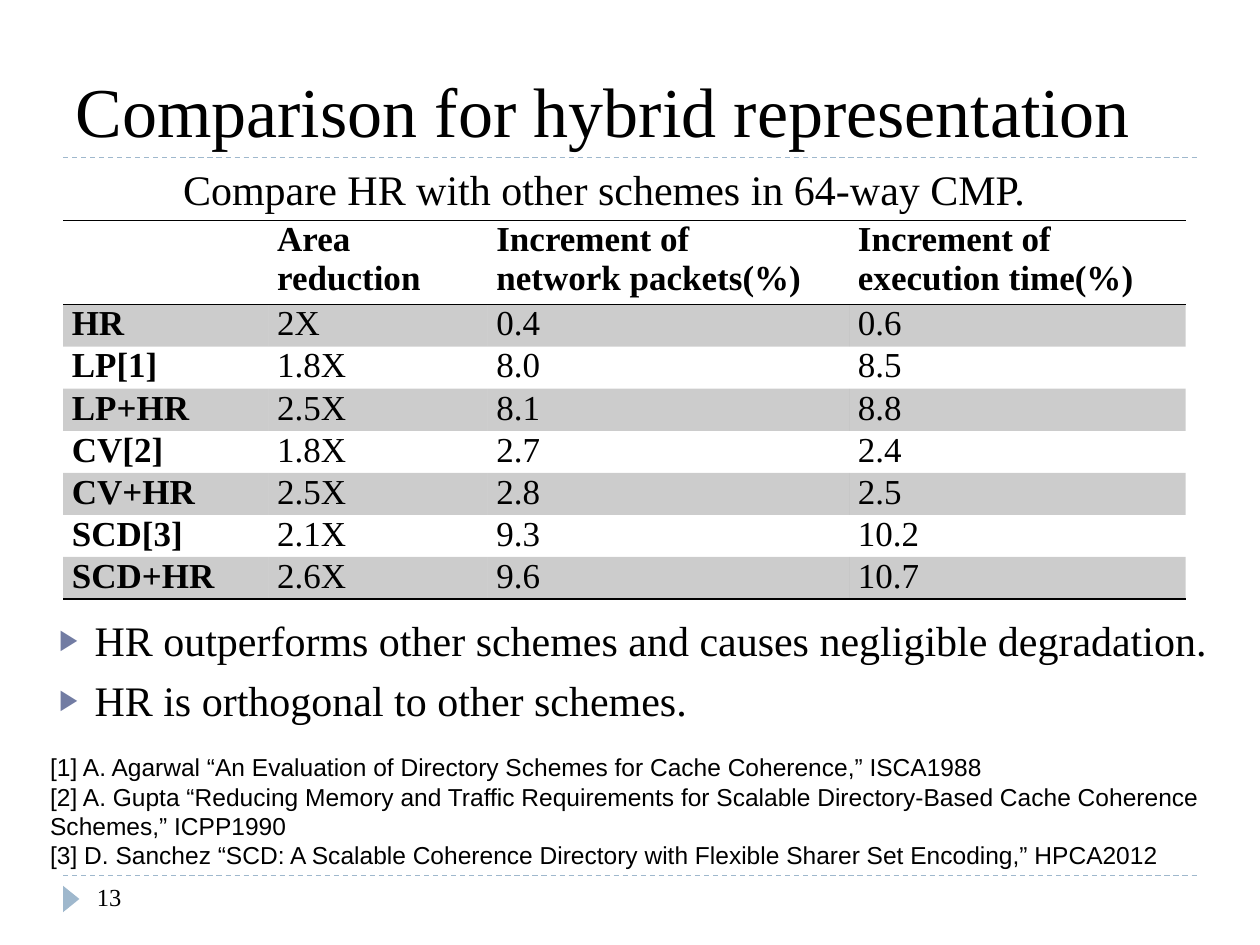
from lxml import etree
from pptx import Presentation
from pptx import util as u
from pptx.dml.color import RGBColor
from pptx.enum import dml, shapes, text
from pptx.oxml import ns

PX = u.Inches(1) // 100
SERIF = "Times New Roman"
BLACK, RULE, BULLET = "000000", "9FB8CD", "727CA3"
PLAIN_STYLE = "{2D5ABB26-0587-4C30-8999-92F81FD0307C}"
HEADER = ["", "Area reduction", "Increment of\nnetwork packets(%)",
          "Increment of execution time(%)"]
SCHEMES = [
    ["HR", "2X", "0.4", "0.6"],
    ["LP[1]", "1.8X", "8.0", "8.5"],
    ["LP+HR", "2.5X", "8.1", "8.8"],
    ["CV[2]", "1.8X", "2.7", "2.4"],
    ["CV+HR", "2.5X", "2.8", "2.5"],
    ["SCD[3]", "2.1X", "9.3", "10.2"],
    ["SCD+HR", "2.6X", "9.6", "10.7"],
]
FINDINGS = [
    "HR outperforms other schemes and causes negligible degradation.",
    "HR is orthogonal to other schemes.",
]
REFERENCES = [
    "[1] A. Agarwal “An Evaluation of Directory Schemes for Cache Coherence,” ISCA1988",
    "[2] A. Gupta “Reducing Memory and Traffic Requirements for Scalable "
    "Directory-Based Cache Coherence Schemes,” ICPP1990",
    "[3] D. Sanchez “SCD: A Scalable Coherence Directory with Flexible Sharer "
    "Set Encoding,” HPCA2012",
]


def emu(*lengths):
    """Turn px lengths into EMU."""
    return [length * PX for length in lengths]


def color(value):
    """Return the colour for a hex string."""
    return RGBColor.from_string(value)


def apply(target, values):
    """Set each attribute named in a dict."""
    for name, value in values.items():
        setattr(target, name, value)


def add_xml(parent, tag, **attributes):
    """Append a DrawingML element and return it."""
    return etree.SubElement(parent, ns.qn(tag), attributes)


def write(frame, lines, size, font=SERIF, bold=False, **layout):
    """Fill a text frame with equally formatted paragraphs."""
    frame.text = "\n".join(lines)
    for para in frame.paragraphs:
        apply(para, {"alignment": text.PP_ALIGN.LEFT, **layout})
        for span in para.runs:
            apply(span.font, {"name": font, "size": u.Pt(size), "bold": bold})
            span.font.color.rgb = color(BLACK)


def place(shape, box):
    """Move a placeholder to a px box."""
    apply(shape, dict(zip(("left", "top", "width", "height"), emu(*box))))


def add_title(page, box, words):
    """Write the title at the bottom of its box."""
    title = page.shapes.title
    place(title, box)
    apply(title.text_frame, {"vertical_anchor": text.MSO_ANCHOR.BOTTOM,
                             "auto_size": text.MSO_AUTO_SIZE.NONE})
    write(title.text_frame, [words], 40)


def add_findings(page, box, lines):
    """Write the body list with arrow bullets."""
    body = page.placeholders[1]
    place(body, box)
    body.text_frame.auto_size = text.MSO_AUTO_SIZE.NONE
    write(body.text_frame, lines, 24, space_before=u.Pt(5))
    for para in body.text_frame.paragraphs:
        properties = para._p.get_or_add_pPr()
        properties.set("marL", str(40 * PX))
        properties.set("indent", str(-28 * PX))
        add_xml(add_xml(properties, "a:buClr"), "a:srgbClr", val=BULLET)
        add_xml(properties, "a:buSzPct", val="68000")
        add_xml(properties, "a:buChar", char="▶")


def add_note(page, box, lines, size, **layout):
    """Add a wrapping text box."""
    frame = page.shapes.add_textbox(*emu(*box)).text_frame
    frame.word_wrap = True
    write(frame, lines, size, **layout)


def add_rule(page, left, top, width):
    """Draw a dashed horizontal rule."""
    rule = page.shapes.add_connector(
        shapes.MSO_CONNECTOR.STRAIGHT, *emu(left, top, left + width, top))
    apply(rule.line, {"width": u.Pt(0.75), "dash_style": dml.MSO_LINE.DASH})
    rule.line.color.rgb = color(RULE)
    add_xml(rule._element.spPr, "a:effectLst")


def add_footer(page, box, number):
    """Draw the footer rule, page marker and page number."""
    left, top, width, height = box
    add_rule(page, left, top, width)
    marker = page.shapes.add_shape(
        shapes.MSO_SHAPE.ISOSCELES_TRIANGLE, *emu(left - 4, top + 12, 21, 13))
    marker.rotation = 90
    marker.shadow.inherit = False
    marker.fill.solid()
    marker.fill.fore_color.rgb = color(RULE)
    marker.line.fill.background()
    add_note(page, (left + 17, top, 217, height), [number], 14)


def add_border(cell, side):
    """Draw a black border on one side of a cell."""
    border = add_xml(cell._tc.get_or_add_tcPr(), side, w=str(u.Pt(1)))
    add_xml(add_xml(border, "a:solidFill"), "a:srgbClr", val=BLACK)


def shade(cell):
    """Fill a cell with translucent black."""
    cell.fill.solid()
    cell.fill.fore_color.rgb = color(BLACK)
    tint = cell._tc.tcPr.find(ns.qn("a:solidFill"))[0]
    add_xml(tint, "a:alpha", val="20000")


def add_results(page, left, top, widths, rows):
    """Build the table with ruled header and shaded odd rows."""
    last = len(rows) - 1
    heights = [61] + [30] * last
    frame = page.shapes.add_table(len(rows), len(widths),
                                  *emu(left, top, sum(widths), sum(heights)))
    table = frame.table
    apply(table, {"first_row": False, "horz_banding": False})
    table._tbl.tblPr.find(ns.qn("a:tableStyleId")).text = PLAIN_STYLE
    for column, width in zip(table.columns, widths):
        column.width = width * PX
    for index, (row, height, words) in enumerate(zip(table.rows, heights, rows)):
        row.height = height * PX
        for number, (cell, word) in enumerate(zip(row.cells, words)):
            apply(cell, {"margin_left": 7 * PX, "margin_right": 7 * PX,
                         "margin_top": 0, "margin_bottom": 0})
            write(cell.text_frame, [word], 20, bold=0 in (index, number))
            if index == 0:
                add_border(cell, "a:lnT")
            if index in (0, last):
                add_border(cell, "a:lnB")
            if index % 2:
                shade(cell)
            else:
                cell.fill.background()


def main():
    """Build and save the comparison slide."""
    deck = Presentation()
    apply(deck, {"slide_width": 1000 * PX, "slide_height": 750 * PX})
    page = deck.slides.add_slide(deck.slide_layouts[1])
    add_rule(page, 50, 125, 900)
    add_footer(page, (50, 695, 900, 40), "13")
    add_title(page, (50, 17, 900, 108), "Comparison for hybrid representation")
    add_results(page, 50, 175, (163, 174, 287, 267), [HEADER] + SCHEMES)
    add_findings(page, (25, 483, 950, 92), FINDINGS)
    add_note(page, (42, 125, 875, 50),
             ["Compare HR with other schemes in 64-way CMP."], 24,
             alignment=text.PP_ALIGN.CENTER)
    add_note(page, (30, 592, 933, 104), REFERENCES, 14, font="Arial")
    deck.save("out.pptx")


if __name__ == "__main__":
    main()
